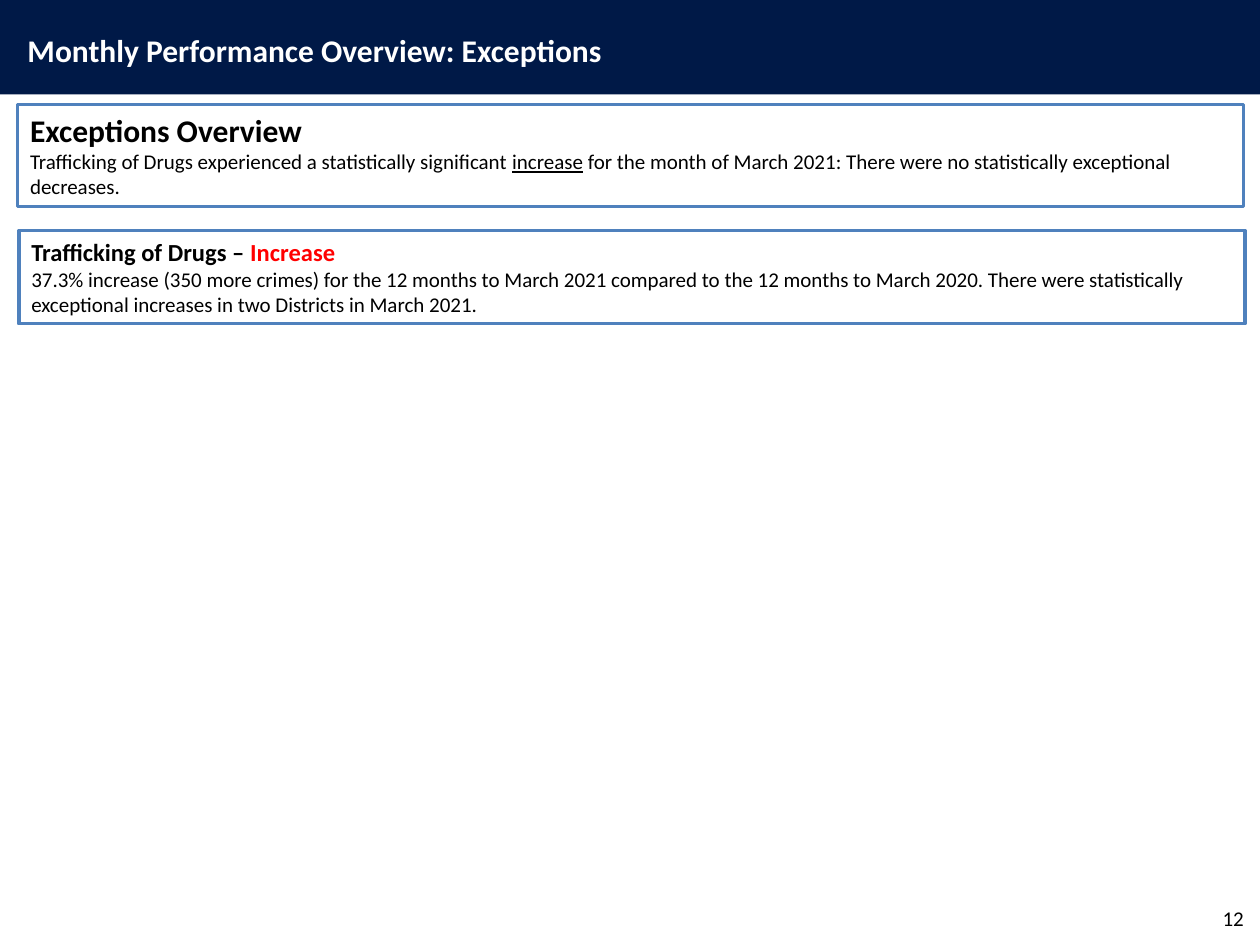
from pptx import Presentation
from pptx.dml.color import RGBColor
from pptx.enum.shapes import MSO_SHAPE
from pptx.enum.text import MSO_ANCHOR, PP_ALIGN
from pptx.util import Inches, Pt

NAVY = RGBColor(0x00, 0x19, 0x47)
BLUE = RGBColor(0x4F, 0x81, 0xBD)
RED = RGBColor(0xFF, 0x00, 0x00)
WHITE = RGBColor(0xFF, 0xFF, 0xFF)
BLACK = RGBColor(0x00, 0x00, 0x00)
FONT = "Calibri"


def add_run(p, text, size=12, color=BLACK, bold=False, underline=False):
    r = p.add_run()
    r.text = text
    r.font.name = FONT
    r.font.size = Pt(size)
    r.font.color.rgb = color
    r.font.bold = bold
    r.font.underline = underline


def add_rect(s, left, top, width, height, fill, line=None):
    sp = s.shapes.add_shape(MSO_SHAPE.RECTANGLE, Inches(left), Inches(top),
                            Inches(width), Inches(height))
    sp.shadow.inherit = False
    sp.fill.solid()
    sp.fill.fore_color.rgb = fill
    if line is None:
        sp.line.fill.background()
    else:
        sp.line.color.rgb = line
        sp.line.width = Pt(2)
    return sp


def add_label(s, left, top, width, text, align=PP_ALIGN.LEFT,
              anchor=MSO_ANCHOR.TOP, **fmt):
    tf = s.shapes.add_textbox(Inches(left), Inches(top),
                              Inches(width), Inches(0.4)).text_frame
    tf.word_wrap = True
    tf.vertical_anchor = anchor
    tf.paragraphs[0].alignment = align
    add_run(tf.paragraphs[0], text, **fmt)


def add_panel(s, left, top, height, heading, body):
    """Add a bordered box; heading and body are lists of (text, format)."""
    tf = add_rect(s, left, top, 9.73, height, WHITE, BLUE).text_frame
    tf.word_wrap = True
    tf.vertical_anchor = MSO_ANCHOR.TOP
    for p, runs in ((tf.paragraphs[0], heading), (tf.add_paragraph(), body)):
        p.alignment = PP_ALIGN.LEFT
        for text, fmt in runs:
            add_run(p, text, **fmt)


def main():
    prs = Presentation()
    prs.slide_width, prs.slide_height = Inches(10), Inches(7.5)
    s = prs.slides.add_slide(prs.slide_layouts[6])

    add_rect(s, 0, 0, 10, 0.75, NAVY)
    add_label(s, 0.12, 0.2, 5.67, "Monthly Performance Overview: Exceptions",
              size=18, color=WHITE, bold=True)
    add_label(s, 7.64, 7.09, 2.33, "12", align=PP_ALIGN.RIGHT,
              anchor=MSO_ANCHOR.MIDDLE)

    add_panel(
        s, 0.14, 0.83, 0.81,
        [("Exceptions Overview", {"size": 18, "bold": True})],
        [("Trafficking of Drugs experienced a statistically significant ", {}),
         ("increase", {"underline": True}),
         (" for the month of March 2021: There were no statistically "
          "exceptional decreases.", {})])
    add_panel(
        s, 0.15, 1.83, 0.74,
        [("Trafficking of Drugs – ", {"size": 14, "bold": True}),
         ("Increase", {"size": 14, "bold": True, "color": RED})],
        [("37.3% increase (350 more crimes) for the 12 months to March 2021 "
          "compared to the 12 months to March 2020. There were statistically "
          "exceptional increases in two Districts in March 2021.", {})])

    prs.save("out.pptx")


if __name__ == "__main__":
    main()
